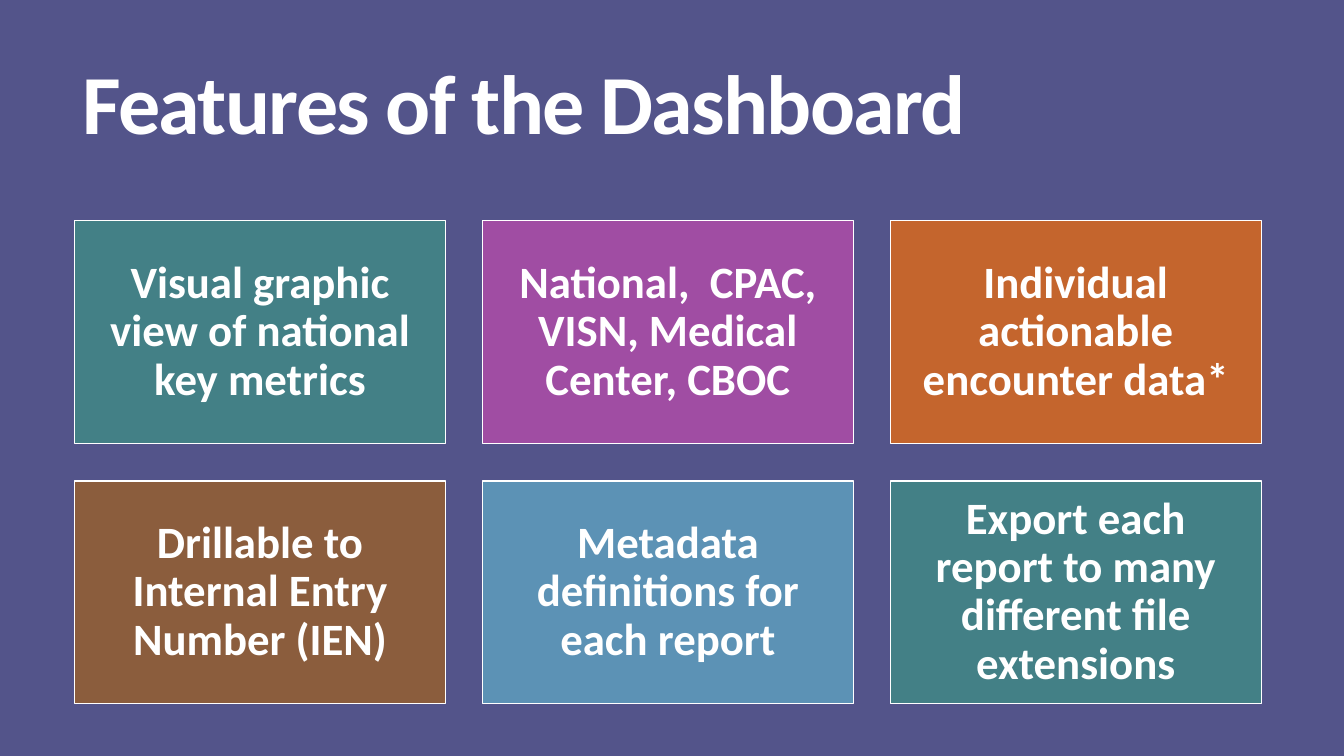
from typing import NamedTuple

from pptx import Presentation
from pptx import util as u
from pptx.dml import color
from pptx.enum import shapes, text

COLORS = {
    "background": "53548A",
    "white": "FFFFFF",
    "teal": "438086",
    "purple": "A04DA3",
    "orange": "C4652D",
    "brown": "8B5D3D",
    "blue": "5C92B5",
}
FONT = "Calibri"

# Card grid, in inches
COLUMNS = 3
CARD_WIDTH, CARD_HEIGHT = 3.68, 2.21
FIRST_LEFT, LAST_LEFT = 0.74, 8.83
FIRST_TOP, ROW_STEP = 2.19, 2.58
COLUMN_STEP = (LAST_LEFT - FIRST_LEFT) / (COLUMNS - 1)
CARD_INSET = 0.13


class Feature(NamedTuple):
    wording: str
    fill: str


FEATURES = [
    Feature("Visual graphic view of national key metrics", "teal"),
    Feature("National,  CPAC, VISN, Medical Center, CBOC", "purple"),
    Feature("Individual actionable encounter data*", "orange"),
    Feature("Drillable to Internal Entry Number (IEN)", "brown"),
    Feature("Metadata definitions for each report", "blue"),
    Feature("Export each report to many different file extensions", "teal"),
]


def rgb(name: str) -> color.RGBColor:
    return color.RGBColor.from_string(COLORS[name])


def write(frame, wording: str, size: int, align, spacing: float):
    """Fill a text frame with one bold white paragraph and return its run."""
    frame.text = wording
    frame.word_wrap = True
    frame.auto_size = text.MSO_AUTO_SIZE.NONE
    frame.vertical_anchor = text.MSO_ANCHOR.MIDDLE
    paragraph = frame.paragraphs[0]
    paragraph.alignment = align
    paragraph.line_spacing = spacing
    run = paragraph.runs[0]
    run.font.name = FONT
    run.font.size = u.Pt(size)
    run.font.bold = True
    run.font.color.rgb = rgb("white")
    return run


def add_title(slide, wording: str) -> None:
    title = slide.shapes.title
    title.left, title.top = u.Inches(0.72), u.Inches(0.17)
    title.width, title.height = u.Inches(11.78), u.Inches(1.81)
    run = write(title.text_frame, wording, 60, text.PP_ALIGN.LEFT, 0.85)
    # Letter spacing, in hundredths of a point
    run._r.get_or_add_rPr().set("spc", "-120")


def add_card(slide, feature: Feature, row: int, column: int) -> None:
    card = slide.shapes.add_shape(
        shapes.MSO_SHAPE.RECTANGLE,
        u.Inches(FIRST_LEFT + column * COLUMN_STEP),
        u.Inches(FIRST_TOP + row * ROW_STEP),
        u.Inches(CARD_WIDTH),
        u.Inches(CARD_HEIGHT),
    )
    card.shadow.inherit = False
    card.fill.solid()
    card.fill.fore_color.rgb = rgb(feature.fill)
    card.line.color.rgb = rgb("white")
    card.line.width = u.Pt(1)
    frame = card.text_frame
    frame.margin_left = frame.margin_right = u.Inches(CARD_INSET)
    frame.margin_top = frame.margin_bottom = u.Inches(CARD_INSET)
    write(frame, feature.wording, 32, text.PP_ALIGN.CENTER, 0.9)


def main() -> None:
    deck = Presentation()
    deck.slide_width, deck.slide_height = u.Inches(13.33), u.Inches(7.5)
    slide = deck.slides.add_slide(deck.slide_layouts.get_by_name("Title Only"))

    # Background
    slide.background.fill.solid()
    slide.background.fill.fore_color.rgb = rgb("background")

    # Heading and feature cards
    add_title(slide, "Features of the Dashboard")
    for index, feature in enumerate(FEATURES):
        add_card(slide, feature, *divmod(index, COLUMNS))

    deck.save("out.pptx")


if __name__ == "__main__":
    main()
